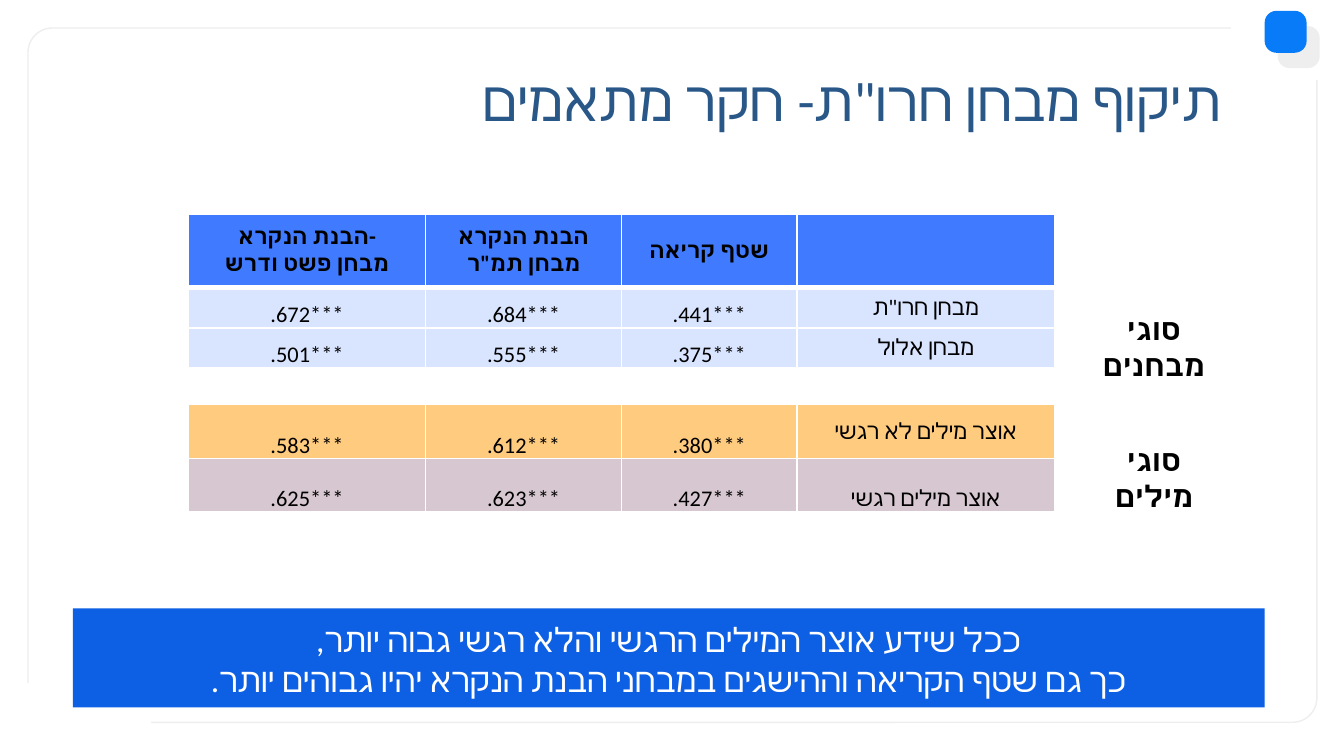
from lxml import etree
from pptx import Presentation
from pptx.dml.color import RGBColor
from pptx.enum import shapes, text
from pptx.oxml.ns import qn
from pptx.util import Pt

FONT = "Calibri"
BLACK = RGBColor(0x00, 0x00, 0x00)
WHITE = RGBColor(0xFF, 0xFF, 0xFF)
NAVY = RGBColor(0x28, 0x57, 0x88)
BANNER_BLUE = RGBColor(0x0D, 0x5F, 0xE4)
ACCENT_BLUE = RGBColor(0x08, 0x7B, 0xF8)
PALE_GREY = RGBColor(0xEE, 0xEE, 0xEE)
HEADER_BLUE = RGBColor(0x40, 0x7B, 0xFF)
TEST_BLUE = RGBColor(0xD9, 0xE5, 0xFF)
NEUTRAL_ORANGE = RGBColor(0xFF, 0xCB, 0x7F)
EMOTION_MAUVE = RGBColor(0xD7, 0xC7, 0xD0)

COLUMN_WIDTHS = [127, 105, 94, 138]
# Height, fill, bold, line spacing of values, line spacing of label, cells
ROWS = [
    (39.5, HEADER_BLUE, True, 1, 1,
     ["הבנת הנקרא-\nמבחן פשט ודרש", "הבנת הנקרא\nמבחן תמ\"ר", "שטף קריאה", ""]),
    (19.5, TEST_BLUE, False, 1.5, 1, [".672***", ".684***", ".441***", "מבחן חרו\"ת"]),
    (19.5, TEST_BLUE, False, 1.5, 1, [".501***", ".555***", ".375***", "מבחן אלול"]),
    (19.5, WHITE, False, 1, 1, ["", "", "", ""]),
    (26, NEUTRAL_ORANGE, False, 2, 1, [".583***", ".612***", ".380***", "אוצר מילים לא רגשי"]),
    (27, EMOTION_MAUVE, False, 2, 2, [".625***", ".623***", ".427***", "אוצר מילים רגשי"]),
]


def format_text(frame, size, color, bold=False, align=text.PP_ALIGN.CENTER,
                rtl=False, spacing=None):
    for paragraph in frame.paragraphs:
        paragraph.alignment = align
        paragraph.line_spacing = spacing
        if rtl:
            paragraph._p.get_or_add_pPr().set("rtl", "1")
        for run in paragraph.runs:
            run.font.size = Pt(size)
            run.font.bold = bold
            run.font.name = FONT
            run.font.color.rgb = color
            script_font = etree.SubElement(run.font._element, qn("a:cs"))
            script_font.set("typeface", FONT)
        if not paragraph.runs:
            etree.SubElement(paragraph._p, qn("a:endParaRPr")).set("sz", str(size * 100))


def add_block(slide, box, fill=None, line=None, corner=None):
    """Add a rectangle, rounded when a corner ratio is given."""
    kind = shapes.MSO_SHAPE.RECTANGLE if corner is None else shapes.MSO_SHAPE.ROUNDED_RECTANGLE
    block = slide.shapes.add_shape(kind, *map(Pt, box))
    block.shadow.inherit = False
    if corner is not None:
        block.adjustments[0] = corner
    if fill is None:
        block.fill.background()
    else:
        block.fill.solid()
        block.fill.fore_color.rgb = fill
    if line is None:
        block.line.fill.background()
    else:
        block.line.color.rgb = line
        block.line.width = Pt(0.75)


def add_text(slide, box, words, size, color, **style):
    area = slide.shapes.add_textbox(*map(Pt, box))
    frame = area.text_frame
    frame.word_wrap = True
    frame.auto_size = text.MSO_AUTO_SIZE.SHAPE_TO_FIT_TEXT
    frame.text = words
    format_text(frame, size, color, **style)


def add_frame(slide, box):
    """Draw the rounded page outline, its two gaps and the corner squares."""
    left, top, width, height = box
    right, bottom = left + width, top + height
    add_block(slide, box, line=PALE_GREY, corner=0.035)
    add_block(slide, (right - 46, top - 13, 58, 41), WHITE)
    for dx, dy, color in [(-21, -1, PALE_GREY), (-28, -9.2, ACCENT_BLUE)]:
        add_block(slide, (right + dx, top + dy, 22.5, 22.5), color, corner=0.284)
    add_block(slide, (left - 11, bottom - 21, 77, 39), WHITE)


def add_title(slide, box):
    title = slide.shapes.title
    title.left, title.top, title.width, title.height = map(Pt, box)
    frame = title.text_frame
    frame.text = "תיקוף מבחן חרו\"ת- חקר מתאמים"
    frame.auto_size = text.MSO_AUTO_SIZE.NONE
    frame.vertical_anchor = text.MSO_ANCHOR.TOP
    frame.margin_left = frame.margin_right = Pt(7.2)
    frame.margin_top = frame.margin_bottom = Pt(7.2)
    format_text(frame, 30, NAVY, align=text.PP_ALIGN.RIGHT, rtl=True)


def add_borders(cell, bottom_width):
    properties = cell._tc.get_or_add_tcPr()
    widths = {"a:lnL": 1, "a:lnR": 1, "a:lnT": 1, "a:lnB": bottom_width}
    for position, (side, width) in enumerate(widths.items()):
        line = etree.Element(qn(side), w=str(Pt(width)))
        fill = etree.SubElement(line, qn("a:solidFill"))
        etree.SubElement(fill, qn("a:srgbClr")).set("val", str(WHITE))
        properties.insert(position, line)


def add_correlations(slide, box):
    table = slide.shapes.add_table(len(ROWS), len(COLUMN_WIDTHS), *map(Pt, box)).table
    for column, width in zip(table.columns, COLUMN_WIDTHS):
        column.width = Pt(width)
    label_column = len(COLUMN_WIDTHS) - 1
    for r, (height, fill, bold, value_spacing, label_spacing, words) in enumerate(ROWS):
        table.rows[r].height = Pt(height)
        for c, word in enumerate(words):
            cell = table.cell(r, c)
            cell.text_frame.text = word
            cell.vertical_anchor = text.MSO_ANCHOR.MIDDLE
            cell.margin_left = cell.margin_right = Pt(5)
            cell.margin_top = cell.margin_bottom = 0
            cell.fill.solid()
            cell.fill.fore_color.rgb = fill
            spacing = label_spacing if c == label_column else value_spacing
            format_text(cell.text_frame, 12, BLACK, bold=bold, spacing=spacing)
            add_borders(cell, 3 if r == 0 else 1)


def add_group_labels(slide, box):
    left, top, width, height = box
    for words, inset, dy in [("סוגי מבחנים", 0, 0), ("סוגי מילים", 6, 70)]:
        add_text(slide, (left + inset, top + dy, width - 2 * inset, height),
                 words, 16, BLACK, bold=True)


def add_conclusion(slide, box):
    left, top, width, height = box
    add_block(slide, box, BANNER_BLUE)
    add_text(slide, (left + 6.5, top + 2, width - 13, height - 2),
             "ככל שידע אוצר המילים הרגשי והלא רגשי גבוה יותר,\n"
             "כך גם שטף הקריאה וההישגים במבחני הבנת הנקרא יהיו גבוהים יותר.",
             18, WHITE, rtl=True)


def main():
    deck = Presentation()
    deck.slide_width, deck.slide_height = Pt(720), Pt(405)
    slide = deck.slides.add_slide(deck.slide_layouts[5])
    add_frame(slide, (15, 15, 690.5, 372))
    add_title(slide, (56, 28, 605.5, 45.5))
    add_conclusion(slide, (39, 326, 638.5, 53))
    add_correlations(slide, (101, 114.5, sum(COLUMN_WIDTHS), sum(row[0] for row in ROWS)))
    add_group_labels(slide, (574, 163, 88.5, 26.5))
    deck.save("out.pptx")


if __name__ == "__main__":
    main()
